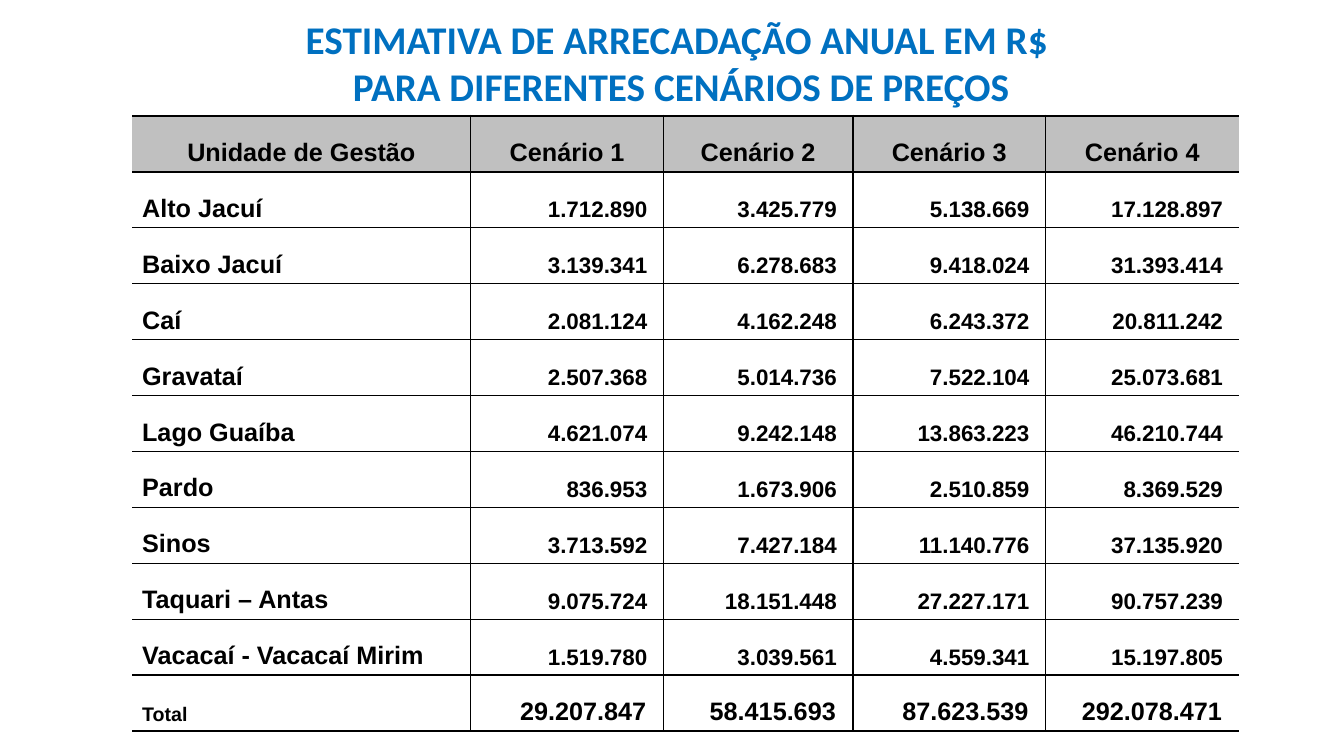
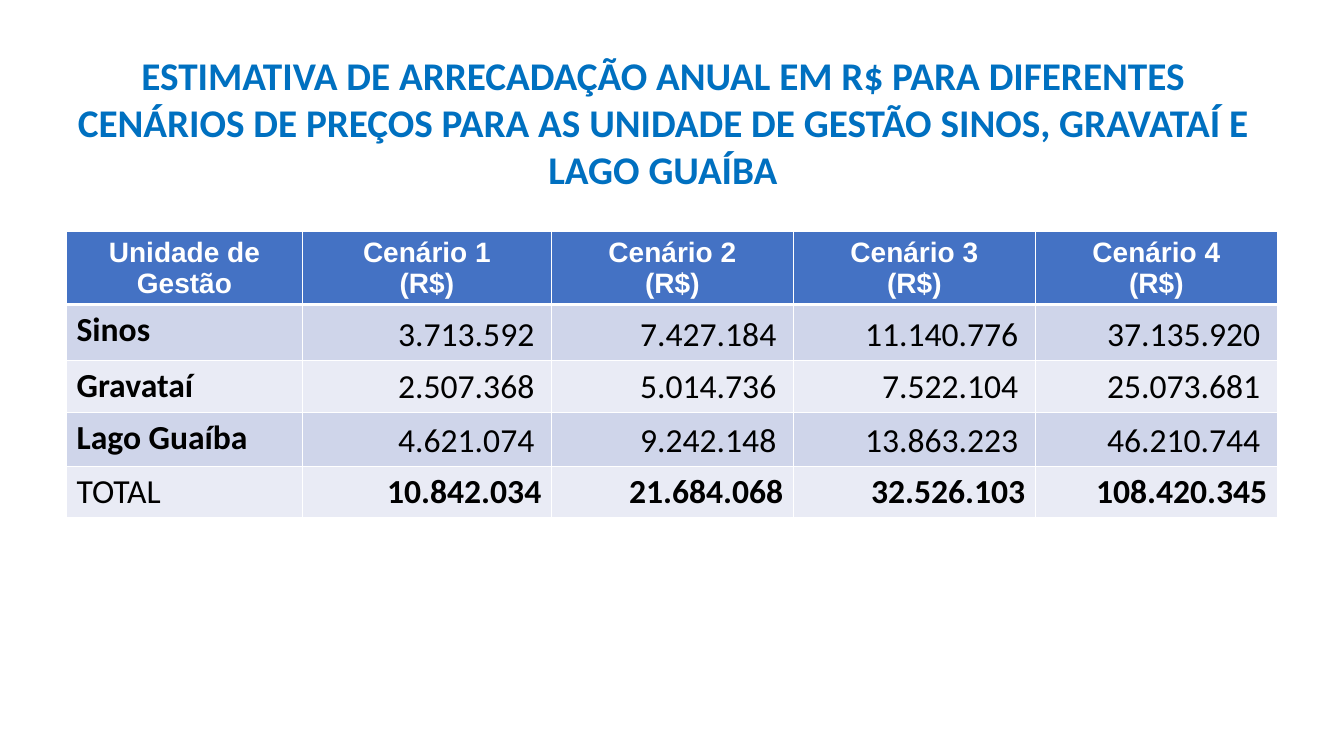
from lxml import etree
from pptx import Presentation
from pptx.dml.color import RGBColor
from pptx.enum.text import MSO_ANCHOR, MSO_AUTO_SIZE, PP_ALIGN
from pptx.oxml.ns import qn
from pptx.util import Inches, Pt

LEFT, CENTER, RIGHT = PP_ALIGN.LEFT, PP_ALIGN.CENTER, PP_ALIGN.RIGHT
TOP, MIDDLE, BOTTOM = MSO_ANCHOR.TOP, MSO_ANCHOR.MIDDLE, MSO_ANCHOR.BOTTOM
TITLE_ONLY = 5

# Content
SCENARIOS = ["Cenário 1", "Cenário 2", "Cenário 3", "Cenário 4"]
REVENUE = {
    "Alto Jacuí": ["1.712.890", "3.425.779", "5.138.669", "17.128.897"],
    "Baixo Jacuí": ["3.139.341", "6.278.683", "9.418.024", "31.393.414"],
    "Caí": ["2.081.124", "4.162.248", "6.243.372", "20.811.242"],
    "Gravataí": ["2.507.368", "5.014.736", "7.522.104", "25.073.681"],
    "Lago Guaíba": ["4.621.074", "9.242.148", "13.863.223", "46.210.744"],
    "Pardo": ["836.953", "1.673.906", "2.510.859", "8.369.529"],
    "Sinos": ["3.713.592", "7.427.184", "11.140.776", "37.135.920"],
    "Taquari – Antas": ["9.075.724", "18.151.448", "27.227.171", "90.757.239"],
    "Vacacaí - Vacacaí Mirim": ["1.519.780", "3.039.561", "4.559.341", "15.197.805"],
}
HEADING = "Unidade de Gestão"
SELECTED_UNITS = ["Sinos", "Gravataí", "Lago Guaíba"]

ALL_UNITS_ROWS = [
    [HEADING, *SCENARIOS],
    *([unit, *values] for unit, values in REVENUE.items()),
    ["Total", "29.207.847", "58.415.693", "87.623.539", "292.078.471"],
]
SELECTED_ROWS = [
    [HEADING, *(f"{scenario}\n(R$)" for scenario in SCENARIOS)],
    *([unit, *REVENUE[unit]] for unit in SELECTED_UNITS),
    ["TOTAL", "10.842.034", "21.684.068", "32.526.103", "108.420.345"],
]

# Look
THEME = {
    "title": {"name": "Calibri", "size": Pt(28), "bold": True, "color": "0070C0"},
    "plain": {
        "fills": {"header": "C0C0C0", "bands": ["FFFFFF"]},
        "line": "000000", "thin": 1, "header_edges": (2, 2), "total_edges": (2, 2),
        "framed_sides": False,
        "fonts": {
            "header": {"name": "Arial", "size": Pt(18), "bold": True, "color": "000000"},
            "label": {"name": "Arial", "size": Pt(18), "bold": True, "color": "000000"},
            "value": {"name": "Arial", "size": Pt(16), "bold": True, "color": "000000"},
            "total_label": {"name": "Arial", "size": Pt(14), "bold": True, "color": "000000"},
            "total_value": {"name": "Arial", "size": Pt(18), "bold": True, "color": "000000"},
        },
        "anchors": {"label": BOTTOM, "total_label": BOTTOM, "total_value": BOTTOM},
        "right_margins": {"value": Inches(0.16), "total_value": Inches(0.17)},
    },
    "banded": {
        "fills": {"header": "4472C4", "bands": ["CFD5EA", "E9EBF5"]},
        "line": "FFFFFF", "thin": 1, "header_edges": (1, 3), "total_edges": (1, 1),
        "framed_sides": True,
        "fonts": {
            "header": {"name": "Arial", "size": Pt(20), "bold": True, "color": "FFFFFF"},
            "label": {"name": "Calibri", "size": Pt(24), "bold": True, "color": "000000"},
            "value": {"name": "Calibri", "size": Pt(24), "bold": False, "color": "000000"},
            "total_label": {"name": "Calibri", "size": Pt(24), "bold": False, "color": "000000"},
            "total_value": {"name": "Calibri", "size": Pt(24), "bold": True, "color": "000000"},
        },
        "anchors": {"label": TOP, "total_label": TOP, "total_value": TOP},
        "right_margins": {"value": Inches(0.17)},
    },
}

SLIDES = [
    {
        "title": "ESTIMATIVA DE ARRECADAÇÃO ANUAL EM R$ \nPARA DIFERENTES CENÁRIOS DE PREÇOS",
        "title_box": (2.51, 0.1, 8.49, 1.04),
        "rows": ALL_UNITS_ROWS,
        "look": THEME["plain"],
        "origin": (1.31, 1.15),
        "widths": [3.36, 1.91, 1.88, 1.91, 1.92],
        "heights": [0.555] * len(ALL_UNITS_ROWS),
    },
    {
        "title": "ESTIMATIVA DE ARRECADAÇÃO ANUAL EM R$ PARA DIFERENTES CENÁRIOS DE PREÇOS "
                 "PARA AS UNIDADE DE GESTÃO SINOS, GRAVATAÍ E LAGO GUAÍBA",
        "title_box": (0.47, 0.45, 12.21, 1.51),
        "rows": SELECTED_ROWS,
        "look": THEME["banded"],
        "origin": (0.66, 2.3),
        "widths": [2.34, 2.47, 2.4, 2.4, 2.4],
        "heights": [0.71, 0.56, 0.51, 0.54, 0.51],
    },
]


def apply(target, values):
    for attribute, value in values.items():
        setattr(target, attribute, value)


def format_text(frame, font, align):
    for paragraph in frame.paragraphs:
        paragraph.alignment = align
        for run in paragraph.runs:
            apply(run.font, {key: font[key] for key in ("name", "size", "bold")})
            run.font.color.rgb = RGBColor.from_string(font["color"])


def set_borders(cell, color, widths):
    """Draw the sides L, R, T, B; a width of 0 leaves that side without a line."""
    properties = cell._tc.get_or_add_tcPr()
    for side, width in widths.items():
        line = etree.SubElement(properties, qn(f"a:ln{side}"), w=str(Pt(width)))
        if width:
            fill = etree.SubElement(line, qn("a:solidFill"))
            etree.SubElement(fill, qn("a:srgbClr"), val=color)
        else:
            etree.SubElement(line, qn("a:noFill"))


def cell_role(row, column, last_row):
    if row == 0:
        return "header"
    kind = "value" if column else "label"
    return f"total_{kind}" if row == last_row else kind


def row_edges(row, last_row, look):
    """Widths of the lines above and below a row; neighbours share one line."""
    if row == 0:
        return look["header_edges"]
    if row == last_row:
        return look["total_edges"]
    above = look["header_edges"][1] if row == 1 else look["thin"]
    below = look["total_edges"][0] if row == last_row - 1 else look["thin"]
    return above, below


def add_title(slide, text, box):
    title = slide.shapes.title
    apply(title, dict(zip(("left", "top", "width", "height"), map(Inches, box))))
    frame = title.text_frame
    frame.text = text
    apply(frame, {"word_wrap": True, "auto_size": MSO_AUTO_SIZE.NONE,
                  "vertical_anchor": MIDDLE})
    format_text(frame, THEME["title"], CENTER)


def add_revenue_table(slide, rows, look, origin, widths, heights):
    extent = (sum(widths), sum(heights))
    table = slide.shapes.add_table(len(rows), len(widths),
                                   *map(Inches, origin + extent)).table
    for column, width in zip(table.columns, widths):
        column.width = Inches(width)
    for row, height in zip(table.rows, heights):
        row.height = Inches(height)

    last_row, last_column = len(rows) - 1, len(widths) - 1
    side_width = look["thin"] if look["framed_sides"] else 0
    bands = look["fills"]["bands"]
    for r, texts in enumerate(rows):
        above, below = row_edges(r, last_row, look)
        fill = bands[(r - 1) % len(bands)] if r else look["fills"]["header"]
        for c, text in enumerate(texts):
            cell, role = table.cell(r, c), cell_role(r, c, last_row)
            cell.text = text
            align = CENTER if r == 0 else RIGHT if c else LEFT
            format_text(cell.text_frame, look["fonts"][role], align)
            apply(cell, {
                "vertical_anchor": look["anchors"].get(role, BOTTOM),
                "margin_right": look["right_margins"].get(role, Inches(0.1)),
            })
            set_borders(cell, look["line"], {
                "L": look["thin"] if c else side_width,
                "R": look["thin"] if c < last_column else side_width,
                "T": above,
                "B": below,
            })
            cell.fill.solid()
            cell.fill.fore_color.rgb = RGBColor.from_string(fill)


def main():
    deck = Presentation()
    apply(deck, {"slide_width": Inches(13.33), "slide_height": Inches(7.5)})
    for content in SLIDES:
        slide = deck.slides.add_slide(deck.slide_layouts[TITLE_ONLY])
        add_title(slide, content["title"], content["title_box"])
        add_revenue_table(slide, content["rows"], content["look"], content["origin"],
                          content["widths"], content["heights"])
    deck.save("out.pptx")


if __name__ == "__main__":
    main()
